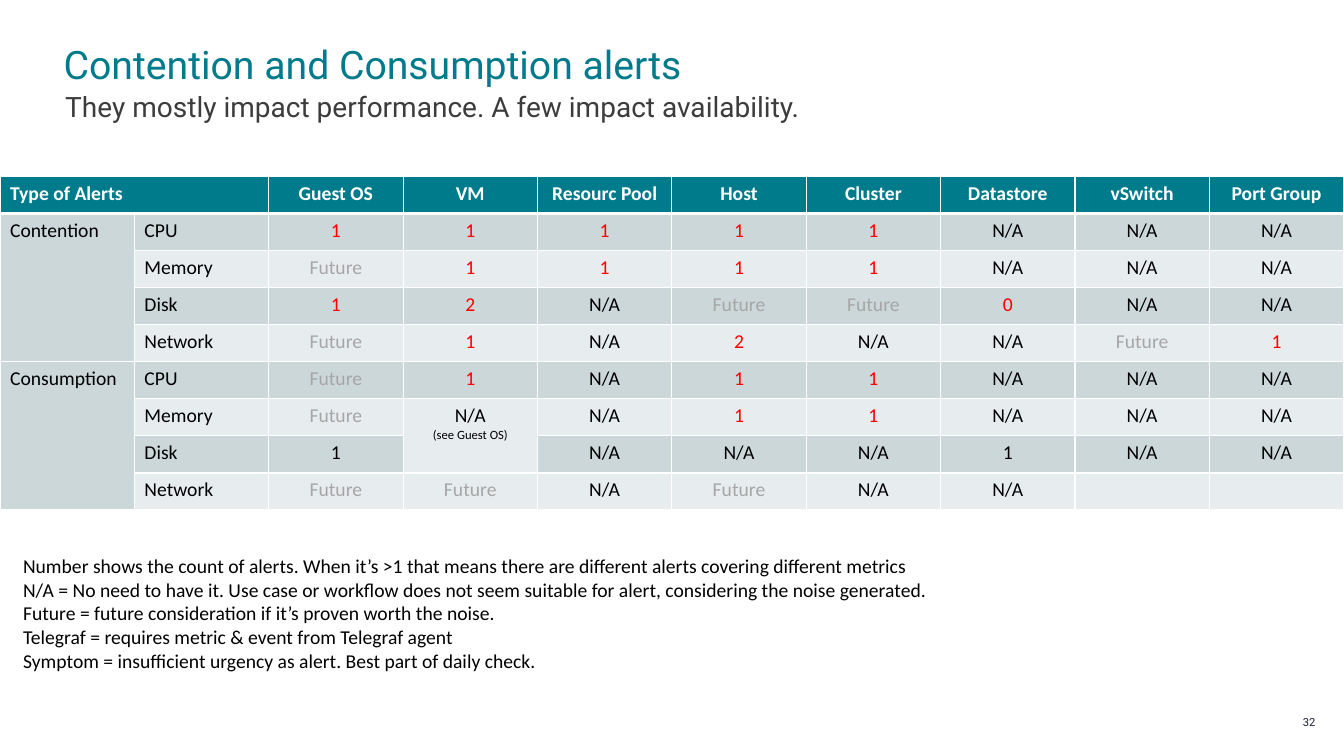
from lxml import etree
from pptx import Presentation
from pptx.dml.color import RGBColor
from pptx.enum.shapes import MSO_SHAPE
from pptx.enum.text import MSO_ANCHOR, MSO_AUTO_SIZE, PP_ALIGN
from pptx.oxml.ns import qn
from pptx.util import Pt

LEFT, CENTER, RIGHT = PP_ALIGN.LEFT, PP_ALIGN.CENTER, PP_ALIGN.RIGHT
TOP, MIDDLE, BOTTOM = MSO_ANCHOR.TOP, MSO_ANCHOR.MIDDLE, MSO_ANCHOR.BOTTOM
FIXED, GROW = MSO_AUTO_SIZE.NONE, MSO_AUTO_SIZE.SHAPE_TO_FIT_TEXT
RECTANGLE = MSO_SHAPE.RECTANGLE
TITLE_ONLY = 5

TITLE = "Contention and Consumption alerts"
SUBTITLE = "They mostly impact performance. A few impact availability."
PAGE_NUMBER = "32"
HEADER = ["Type of Alerts", "", "Guest OS", "VM", "Resourc Pool", "Host",
          "Cluster", "Datastore", "vSwitch", "Port Group"]
ALERTS = [
    ["Contention", "CPU", "1", "1", "1", "1", "1", "N/A", "N/A", "N/A"],
    ["", "Memory", "Future", "1", "1", "1", "1", "N/A", "N/A", "N/A"],
    ["", "Disk", "1", "2", "N/A", "Future", "Future", "0", "N/A", "N/A"],
    ["", "Network", "Future", "1", "N/A", "2", "N/A", "N/A", "Future", "1"],
    ["Consumption", "CPU", "Future", "1", "N/A", "1", "1", "N/A", "N/A", "N/A"],
    ["", "Memory", "Future", "N/A\n(see Guest OS)", "N/A", "1", "1", "N/A", "N/A", "N/A"],
    ["", "Disk", "1", "", "N/A", "N/A", "N/A", "1", "N/A", "N/A"],
    ["", "Network", "Future", "Future", "N/A", "Future", "N/A", "N/A", "", ""],
]
BLACK_COUNT_ROW = 7
# first row, first column, last row, last column
MERGES = [(0, 0, 0, 1), (1, 0, 4, 0), (5, 0, 8, 0), (6, 3, 7, 3)]
NOTES = [
    "Number shows the count of alerts. When it’s >1 that means there are different alerts covering different metrics",
    "N/A = No need to have it. Use case or workflow does not seem suitable for alert, considering the noise generated.",
    "Future = future consideration if it’s proven worth the noise.",
    "Telegraf = requires metric & event from Telegraf agent",
    "Symptom = insufficient urgency as alert. Best part of daily check.",
]

THEME = {
    "teal": "007B8C", "white": "FFFFFF", "text": "000001", "count": "FF0000",
    "future": "A6A6A6", "subtitle": "3C3C3C", "number": "1B1E35",
    "dark_band": "CCD7DA", "light_band": "E7ECEE",
    "title_size": 28, "subtitle_size": 20, "body_size": 14,
    "small_size": 9, "number_size": 8,
    "heading_font": "Roboto", "body_font": "Calibri",
}
COLUMN_WIDTH, ROW_HEIGHT = 96, 26.5


def style(size, color, face="body_font", bold=False):
    return {"size": Pt(THEME[size]), "name": THEME[face], "bold": bold, "color": color}


def paint(item, color):
    item.fill.solid()
    item.fill.fore_color.rgb = RGBColor.from_string(THEME[color])


def write(frame, lines, formats, align=LEFT, spacing=None):
    """Write one paragraph per line, each with its own format."""
    for index, (line, look) in enumerate(zip(lines, formats)):
        para = frame.paragraphs[0] if index == 0 else frame.add_paragraph()
        para.alignment = align
        if spacing:
            para.line_spacing = spacing
        span = para.add_run()
        span.text = line
        for name, value in look.items():
            if name == "color":
                span.font.color.rgb = RGBColor.from_string(THEME[value])
            else:
                setattr(span.font, name, value)


def place(box, left, top, width, height, anchor=TOP, wrap=True, inset=False, fit=FIXED):
    bounds = {"left": left, "top": top, "width": width, "height": height}
    for name, value in bounds.items():
        setattr(box, name, Pt(value))
    frame = box.text_frame
    settings = {"auto_size": fit, "vertical_anchor": anchor, "word_wrap": wrap}
    if not inset:
        settings.update(dict.fromkeys(
            ("margin_left", "margin_top", "margin_right", "margin_bottom"), 0))
    for name, value in settings.items():
        setattr(frame, name, value)
    return frame


def add_text_box(page, *bounds, **settings):
    return place(page.shapes.add_textbox(0, 0, 0, 0), *bounds, **settings)


def add_notes(page):
    panel = page.shapes.add_shape(RECTANGLE, 0, 0, 0, 0)
    panel.shadow.inherit = False
    panel.line.fill.background()
    paint(panel, "white")
    frame = place(panel, 9.4, 392.4, 759, 92, inset=True, fit=GROW)
    write(frame, NOTES, [style("body_size", "text")] * len(NOTES))


def draw_borders(cell, row):
    properties = cell._tc.get_or_add_tcPr()
    for side in ("lnL", "lnR", "lnT", "lnB"):
        heavy = (row, side) in ((0, "lnB"), (1, "lnT"))
        line = etree.SubElement(properties, qn("a:" + side), w=str(Pt(3 if heavy else 1)))
        fill = etree.SubElement(line, qn("a:solidFill"))
        etree.SubElement(fill, qn("a:srgbClr"), val=THEME["white"])


def size_empty_cell(cell):
    """Keep an empty cell from stretching its row."""
    para = cell.text_frame.paragraphs[0]
    etree.SubElement(para._p, qn("a:endParaRPr"), sz=str(THEME["body_size"] * 100))


def text_color(row, text):
    if row == 0:
        return "white"
    if text == "Future":
        return "future"
    return "count" if text.isdigit() and row != BLACK_COUNT_ROW else "text"


def add_alert_table(page):
    rows = [HEADER] + ALERTS
    table = page.shapes.add_table(
        len(rows), len(HEADER), 0, Pt(126),
        Pt(COLUMN_WIDTH * len(HEADER)), Pt(ROW_HEIGHT * len(rows))).table
    for column in table.columns:
        column.width = Pt(COLUMN_WIDTH)
    for line in table.rows:
        line.height = Pt(ROW_HEIGHT)
    for top, left, bottom, right in MERGES:
        table.cell(top, left).merge(table.cell(bottom, right))
    for row, values in enumerate(rows):
        for column, text in enumerate(values):
            cell = table.cell(row, column)
            draw_borders(cell, row)
            paint(cell, "teal" if row == 0 else "dark_band" if row % 2 else "light_band")
            if not text:
                size_empty_cell(cell)
                continue
            color = text_color(row, text)
            formats = [style("body_size", color, bold=row == 0), style("small_size", color)]
            write(cell.text_frame, text.split("\n"), formats, CENTER if column > 1 else LEFT)


def main():
    deck = Presentation()
    deck.slide_width, deck.slide_height = Pt(960), Pt(540)
    page = deck.slides.add_slide(deck.slide_layouts[TITLE_ONLY])

    frame = place(page.shapes.title, 45.5, 32.5, 866, 30, anchor=BOTTOM, wrap=False)
    write(frame, [TITLE], [style("title_size", "teal", "heading_font")], spacing=0.9)
    frame = add_text_box(page, 46.6, 64, 865, 19.5)
    write(frame, [SUBTITLE], [style("subtitle_size", "subtitle", "heading_font")])

    add_alert_table(page)
    add_notes(page)

    frame = add_text_box(page, 905, 509, 34.6, 14.4, anchor=MIDDLE, wrap=False)
    write(frame, [PAGE_NUMBER], [style("number_size", "number", "heading_font")], RIGHT, 0.9)

    deck.save("out.pptx")


if __name__ == "__main__":
    main()
